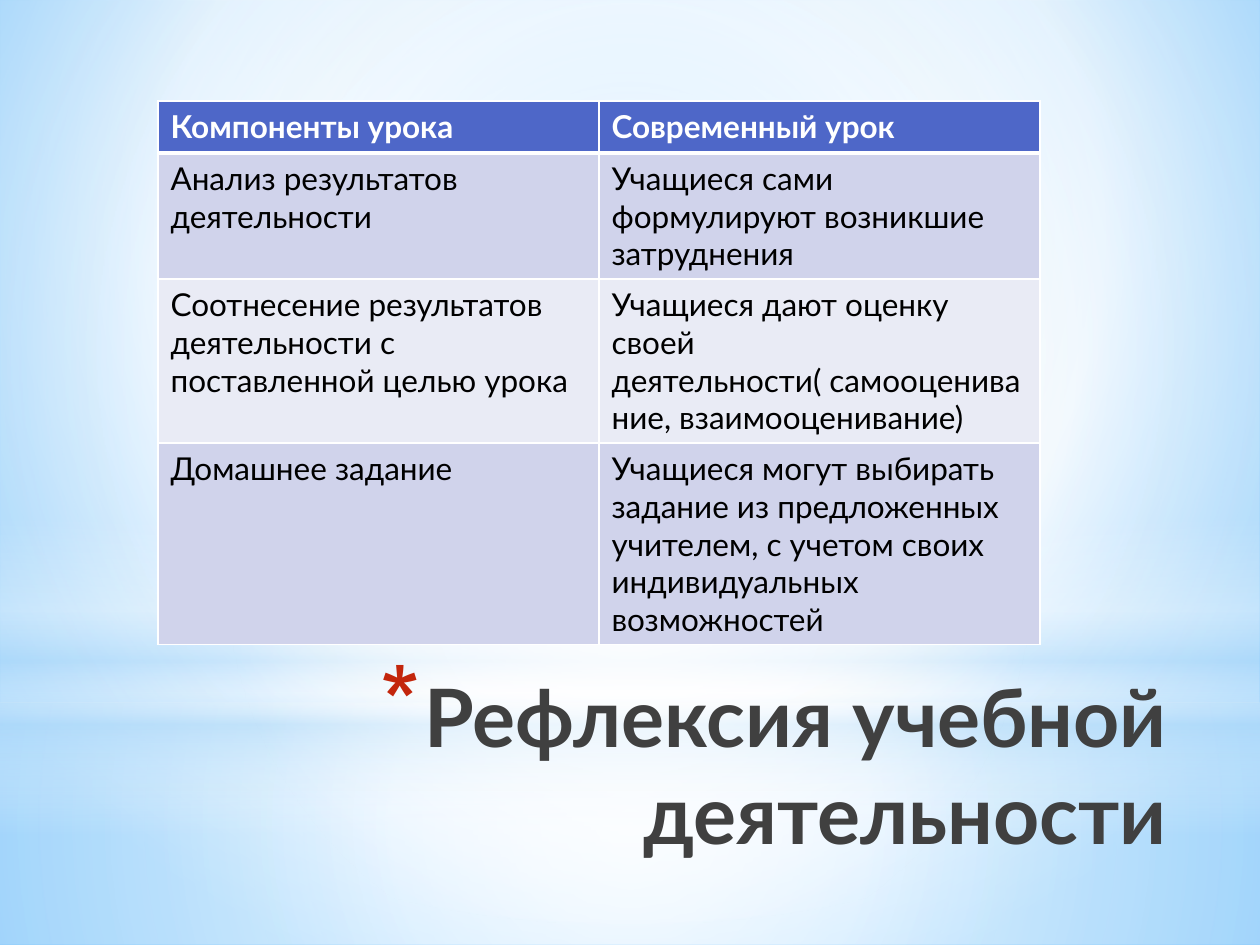
from dataclasses import dataclass

from lxml import etree
from pptx import Presentation
from pptx import util as u
from pptx.dml.color import RGBColor
from pptx.enum import shapes, text
from pptx.oxml.ns import qn

PX_PER_INCH = 126
FONT = "Lato"
COLORS = {
    "white": "FFFFFF",
    "haze": "B4DCFA",
    "sky": "9ED5FF",
    "deep_sky": "5BB9FF",
    "header": "4E67C8",
    "band_dark": "D0D3EB",
    "band_light": "E9EBF5",
    "black": "000000",
    "title": "404040",
    "bullet": "C3260C",
}
CENTER = (50, 50, 50, 50)


@dataclass(frozen=True)
class Stop:
    position: int
    color: str
    alpha: int = 100


@dataclass(frozen=True)
class Glow:
    """A backdrop shape; focus is the radial centre, None means top to bottom."""
    kind: shapes.MSO_SHAPE
    left: int
    top: int
    width: int
    height: int
    stops: tuple[Stop, ...]
    focus: tuple[int, ...] | None = CENTER


@dataclass(frozen=True)
class Row:
    height: int
    fill: str
    texts: tuple[str, str]


BACKGROUND = (Stop(0, "sky"), Stop(60, "white"), Stop(100, "deep_sky"))
GLOWS = (
    Glow(shapes.MSO_SHAPE.RECTANGLE, 0, 703, 1260, 242,
         (Stop(0, "white", 91), Stop(37, "white", 76), Stop(100, "haze", 79))),
    Glow(shapes.MSO_SHAPE.RECTANGLE, 0, 0, 1260, 703,
         (Stop(0, "white", 89), Stop(48, "white", 62), Stop(100, "haze", 79))),
    Glow(shapes.MSO_SHAPE.RECTANGLE, 0, 519, 1260, 315,
         (Stop(0, "white", 0), Stop(29, "white", 30), Stop(45, "haze", 40),
          Stop(55, "white", 26), Stop(65, "haze", 60), Stop(100, "white", 0)), None),
    Glow(shapes.MSO_SHAPE.OVAL, 0, 220, 1260, 703,
         (Stop(0, "white"), Stop(56, "white", 0))),
)
ROWS = (
    Row(52, "header", ("Компоненты урока", "Современный урок")),
    Row(126, "band_dark", ("Анализ результатов деятельности",
                           "Учащиеся сами формулируют возникшие затруднения")),
    Row(164, "band_light", ("Соотнесение результатов деятельности с поставленной целью урока",
                            "Учащиеся дают оценку своей деятельности( самооценивание, взаимооценивание)")),
    Row(201, "band_dark", ("Домашнее задание",
                           "Учащиеся могут выбирать задание из предложенных учителем, "
                           "с учетом своих индивидуальных возможностей")),
)


def px(length: int) -> u.Emu:
    return u.Emu(round(length * u.Inches(1) / PX_PER_INCH))


def rgb(name: str) -> RGBColor:
    return RGBColor.from_string(COLORS[name])


def add(parent, tag: str, **attributes):
    return etree.SubElement(parent, qn(tag), {key: str(value) for key, value in attributes.items()})


def set_gradient(fill, owner, stops: tuple[Stop, ...], focus: tuple[int, ...] | None) -> None:
    """Replace the default gradient of owner by the given stops."""
    fill.gradient()
    gradient = next(owner.iter(qn("a:gradFill")))
    for child in list(gradient):
        gradient.remove(child)
    stop_list = add(gradient, "a:gsLst")
    for stop in stops:
        entry = add(stop_list, "a:gs", pos=stop.position * 1000)
        color = add(entry, "a:srgbClr", val=COLORS[stop.color])
        if stop.alpha < 100:
            add(color, "a:alpha", val=stop.alpha * 1000)
    if focus is None:
        add(gradient, "a:lin", ang=90 * 60000, scaled=0)
    else:
        radial = add(gradient, "a:path", path="circle")
        add(radial, "a:fillToRect", **{side: value * 1000 for side, value in zip("ltrb", focus)})


def draw_glow(page, glow: Glow) -> None:
    shape = page.shapes.add_shape(glow.kind, px(glow.left), px(glow.top),
                                  px(glow.width), px(glow.height))
    shape.shadow.inherit = False
    shape.line.fill.background()
    set_gradient(shape.fill, shape.element, glow.stops, glow.focus)


def write(para, words: str, *, size: int, color: str, bold: bool = False) -> None:
    span = para.add_run()
    span.text = words
    font = span.font
    font.name, font.size, font.bold = FONT, u.Pt(size), bold
    font.color.rgb = rgb(color)


def draw_borders(cell, bottom: int) -> None:
    """White cell borders of 1 pt, with their own width in points below."""
    properties = cell._tc.get_or_add_tcPr()
    for side, width in (("L", 1), ("R", 1), ("T", 1), ("B", bottom)):
        line = add(properties, f"a:ln{side}", w=u.Pt(width))
        add(add(line, "a:solidFill"), "a:srgbClr", val=COLORS["white"])


def draw_table(page, rows: tuple[Row, ...]) -> None:
    height = sum(row.height for row in rows)
    table = page.shapes.add_table(len(rows), 2, px(158), px(101), px(882), px(height)).table
    for index, row in enumerate(rows):
        is_header = index == 0
        table.rows[index].height = px(row.height)
        for column, words in enumerate(row.texts):
            cell = table.cell(index, column)
            draw_borders(cell, bottom=3 if is_header else 1)
            cell.fill.solid()
            cell.fill.fore_color.rgb = rgb(row.fill)
            write(cell.text_frame.paragraphs[0], words, size=18, bold=is_header,
                  color="white" if is_header else "black")


def draw_title(page, words: str) -> None:
    box = page.shapes.add_textbox(px(282), px(661), px(897), px(118))
    box.text_frame.word_wrap = True
    box.text_frame.vertical_anchor = text.MSO_ANCHOR.TOP
    para = box.text_frame.paragraphs[0]
    para.alignment = text.PP_ALIGN.RIGHT
    properties = para._p.get_or_add_pPr()
    properties.set("marL", str(px(44)))
    properties.set("indent", str(-px(44)))
    add(add(properties, "a:buClr"), "a:srgbClr", val=COLORS["bullet"])
    add(properties, "a:buSzPct", val=128000)
    add(properties, "a:buChar", char="*")
    write(para, words, size=46, color="title", bold=True)


def main() -> None:
    deck = Presentation()
    deck.slide_width, deck.slide_height = u.Inches(10), u.Inches(7.5)
    page = deck.slides.add_slide(deck.slide_layouts[6])
    set_gradient(page.background.fill, page.element, BACKGROUND, (20, 10, 20, 60))
    for glow in GLOWS:
        draw_glow(page, glow)
    draw_title(page, "Рефлексия учебной деятельности")
    draw_table(page, ROWS)
    deck.save("out.pptx")


if __name__ == "__main__":
    main()
